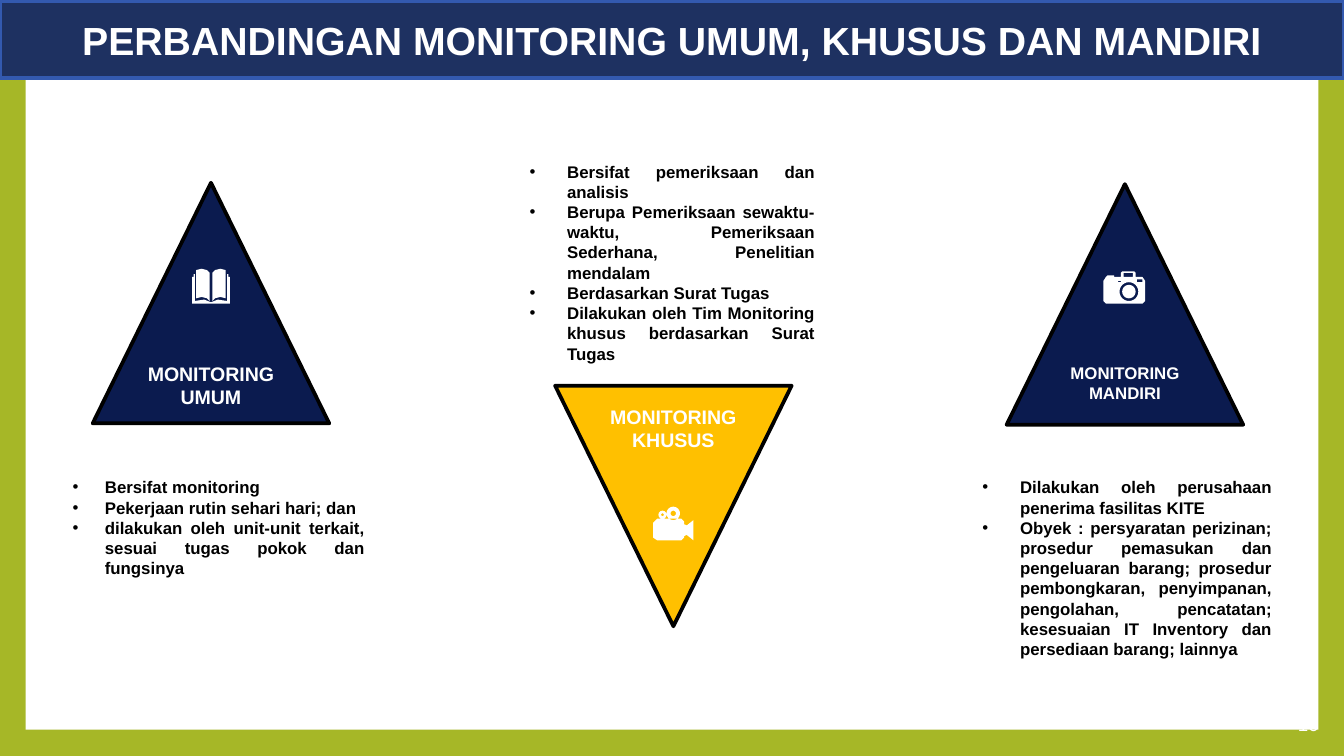
from dataclasses import dataclass
from math import cos, pi, sin

from lxml import etree
from pptx import Presentation
from pptx.dml.color import RGBColor
from pptx.enum.shapes import MSO_SHAPE as Shape
from pptx.enum.text import MSO_ANCHOR as Anchor, MSO_AUTO_SIZE as AutoSize, PP_ALIGN as Align
from pptx.oxml.ns import qn
from pptx.util import Inches, Pt

FONT = "Arial"
WHITE, BLACK = "FFFFFF", "000000"
GREEN, NAVY, GOLD = "A6B727", "0B1B4F", "FFC000"
BANNER, BANNER_EDGE = "1E3161", "3359AF"
TRIANGLE_W, TRIANGLE_H, LABEL_W = 1.76, 1.79, 1.41

Point = tuple[float, float]
Contour = list[Point]


@dataclass
class Box:
    left: float
    top: float
    width: float
    height: float

    def inches(self) -> list[int]:
        return [Inches(v) for v in (self.left, self.top, self.width, self.height)]


@dataclass
class Monitoring:
    label: str
    label_size: float
    label_top: float
    left: float
    top: float
    color: str
    rotation: int
    icon: list[Contour]
    points_box: Box
    indent: float
    points: list[str]


def rgb(color: str) -> RGBColor:
    return RGBColor.from_string(color)


def paint(shape, fill: str, edge: str | None = None) -> None:
    shape.shadow.inherit = False
    shape.fill.solid()
    shape.fill.fore_color.rgb = rgb(fill)
    if edge:
        shape.line.color.rgb = rgb(edge)
        shape.line.width = Pt(2)
    else:
        shape.line.fill.background()


def add_bullet(paragraph, indent: float) -> None:
    props = paragraph._p.get_or_add_pPr()
    props.set("marL", str(Inches(indent)))
    props.set("indent", str(-Inches(indent)))
    color = etree.SubElement(props, qn("a:buClr"))
    etree.SubElement(color, qn("a:srgbClr"), val=BLACK)
    etree.SubElement(props, qn("a:buFont"), typeface=FONT)
    etree.SubElement(props, qn("a:buChar"), char="•")


def write(shape, lines: list[str], size: float, color: str, align: Align,
          bold: bool = True, indent: float = 0) -> None:
    frame = shape.text_frame
    frame.word_wrap = True
    frame.margin_left = frame.margin_right = Inches(0.07)
    frame.margin_top = frame.margin_bottom = Inches(0.04)
    for index, line in enumerate(lines):
        paragraph = frame.add_paragraph() if index else frame.paragraphs[0]
        paragraph.text = line
        paragraph.alignment = align
        if indent:
            add_bullet(paragraph, indent)
        paragraph.font.name = FONT
        paragraph.font.size = Pt(size)
        paragraph.font.bold = bold
        paragraph.font.color.rgb = rgb(color)


def rect(left: float, top: float, right: float, bottom: float) -> Contour:
    return [(left, top), (right, top), (right, bottom), (left, bottom)]


def circle(x: float, y: float, radius: float, steps: int = 24) -> Contour:
    angles = [2 * pi * step / steps for step in range(steps)]
    return [(x + radius * cos(a), y + radius * sin(a)) for a in angles]


def book() -> list[Contour]:
    spine = 1.57
    page = [(0.01, 2.03), (0.03, 2.01), (0.07, 2), (0.11, 2.01), (0.11, 2.22),
            (0.07, 2.21), (0.03, 2.22), (0.01, 2.24)]
    cover = [(0.12, 2.04), (0.13, 2.04), (0.13, 2.06), (0.14, 2.06), (0.14, 2.26),
             (0, 2.26), (0, 2.25), (0.05, 2.23), (0.12, 2.24)]
    return [[(spine + side * x, y) for x, y in part]
            for part in (page, cover) for side in (-1, 1)]


def film_camera() -> list[Contour]:
    body = [(4.89, 3.86), (5.07, 3.86), (5.09, 3.88), (5.09, 3.9), (5.11, 3.91),
            (5.16, 3.87), (5.16, 4.02), (5.11, 3.98), (5.09, 3.99), (5.09, 4),
            (5.07, 4.02), (4.89, 4.02), (4.86, 4), (4.86, 3.89)]
    return [body, circle(4.93, 3.83, 0.03), circle(4.93, 3.83, 0.01),
            circle(5.01, 3.82, 0.05), circle(5.01, 3.82, 0.02)]


def photo_camera() -> list[Contour]:
    body = [(8.23, 2.06), (8.24, 2.05), (8.29, 2.05), (8.29, 2.06), (8.34, 2.06),
            (8.34, 2.03), (8.35, 2.02), (8.44, 2.02), (8.45, 2.03), (8.45, 2.06),
            (8.5, 2.06), (8.52, 2.09), (8.52, 2.24), (8.5, 2.26), (8.23, 2.26),
            (8.21, 2.24), (8.21, 2.09)]
    return [body, circle(8.4, 2.17, 0.07), circle(8.4, 2.17, 0.05),
            rect(8.32, 2.09, 8.34, 2.1), rect(8.46, 2.08, 8.5, 2.1),
            rect(8.36, 2.03, 8.43, 2.06)]


def draw_icon(shapes, contours: list[Contour]) -> None:
    outlines = [[(Inches(x), Inches(y)) for x, y in contour] for contour in contours]
    builder = shapes.build_freeform(*outlines[0][0])
    for index, outline in enumerate(outlines):
        if index:
            builder.move_to(*outline[0])
        builder.add_line_segments(outline[1:], close=True)
    paint(builder.convert_to_shape(), WHITE)


def draw_monitoring(shapes, item: Monitoring) -> None:
    points = shapes.add_textbox(*item.points_box.inches())
    write(points, item.points, 9, BLACK, Align.JUSTIFY, indent=item.indent)
    points.text_frame.auto_size = AutoSize.SHAPE_TO_FIT_TEXT

    triangle_box = Box(item.left, item.top, TRIANGLE_W, TRIANGLE_H)
    triangle = shapes.add_shape(Shape.ISOSCELES_TRIANGLE, *triangle_box.inches())
    triangle.rotation = item.rotation
    paint(triangle, item.color, BLACK)
    draw_icon(shapes, item.icon)

    label_left = item.left + (TRIANGLE_W - LABEL_W) / 2
    label = shapes.add_textbox(*Box(label_left, item.label_top, LABEL_W, 0.4).inches())
    write(label, [item.label], item.label_size, WHITE, Align.CENTER)
    label.text_frame.auto_size = AutoSize.SHAPE_TO_FIT_TEXT


MONITORINGS = [
    Monitoring("MONITORING UMUM", 10.5, 2.65, 0.69, 1.36, NAVY, 0, book(),
               Box(0.47, 3.51, 2.31, 0.83), 0.24,
               ["Bersifat monitoring",
                "Pekerjaan rutin sehari hari; dan",
                "dilakukan oleh unit-unit terkait, sesuai tugas pokok dan fungsinya"]),
    Monitoring("MONITORING KHUSUS", 10.5, 2.97, 4.13, 2.87, GOLD, 180, film_camera(),
               Box(3.87, 1.16, 2.26, 1.59), 0.28,
               ["Bersifat pemeriksaan dan analisis",
                "Berupa Pemeriksaan sewaktu-waktu, Pemeriksaan Sederhana, Penelitian mendalam",
                "Berdasarkan Surat Tugas",
                "Dilakukan oleh Tim Monitoring khusus berdasarkan Surat Tugas"]),
    Monitoring("MONITORING MANDIRI", 9, 2.66, 7.49, 1.37, NAVY, 0, photo_camera(),
               Box(7.24, 3.51, 2.29, 1.44), 0.28,
               ["Dilakukan oleh perusahaan penerima fasilitas KITE",
                "Obyek : persyaratan perizinan; prosedur pemasukan dan pengeluaran barang; "
                "prosedur pembongkaran, penyimpanan, pengolahan, pencatatan; "
                "kesesuaian IT Inventory dan persediaan barang; lainnya"]),
]


def main() -> None:
    deck = Presentation()
    deck.slide_width = Inches(10)
    deck.slide_height = Inches(10) * 9 // 16
    slide = deck.slides.add_slide(deck.slide_layouts[6])
    shapes = slide.shapes

    # Green frame around a white page
    slide.background.fill.solid()
    slide.background.fill.fore_color.rgb = rgb(GREEN)
    page = shapes.add_shape(Shape.RECTANGLE, *Box(0.19, 0.2, 9.62, 5.23).inches())
    paint(page, WHITE)

    # Page number
    number = shapes.add_textbox(*Box(9.49, 5.24, 0.39, 0.3).inches())
    write(number, ["16"], 10, WHITE, Align.RIGHT, bold=False)
    number.text_frame.vertical_anchor = Anchor.MIDDLE

    # Title banner
    banner = shapes.add_shape(Shape.RECTANGLE, *Box(0, 0.01, 10, 0.57).inches())
    paint(banner, BANNER, BANNER_EDGE)
    write(banner, ["PERBANDINGAN MONITORING UMUM, KHUSUS DAN MANDIRI"], 21, WHITE, Align.CENTER)
    banner.text_frame.vertical_anchor = Anchor.MIDDLE

    # The three kinds of monitoring
    for item in MONITORINGS:
        draw_monitoring(shapes, item)

    deck.save("out.pptx")


if __name__ == "__main__":
    main()
